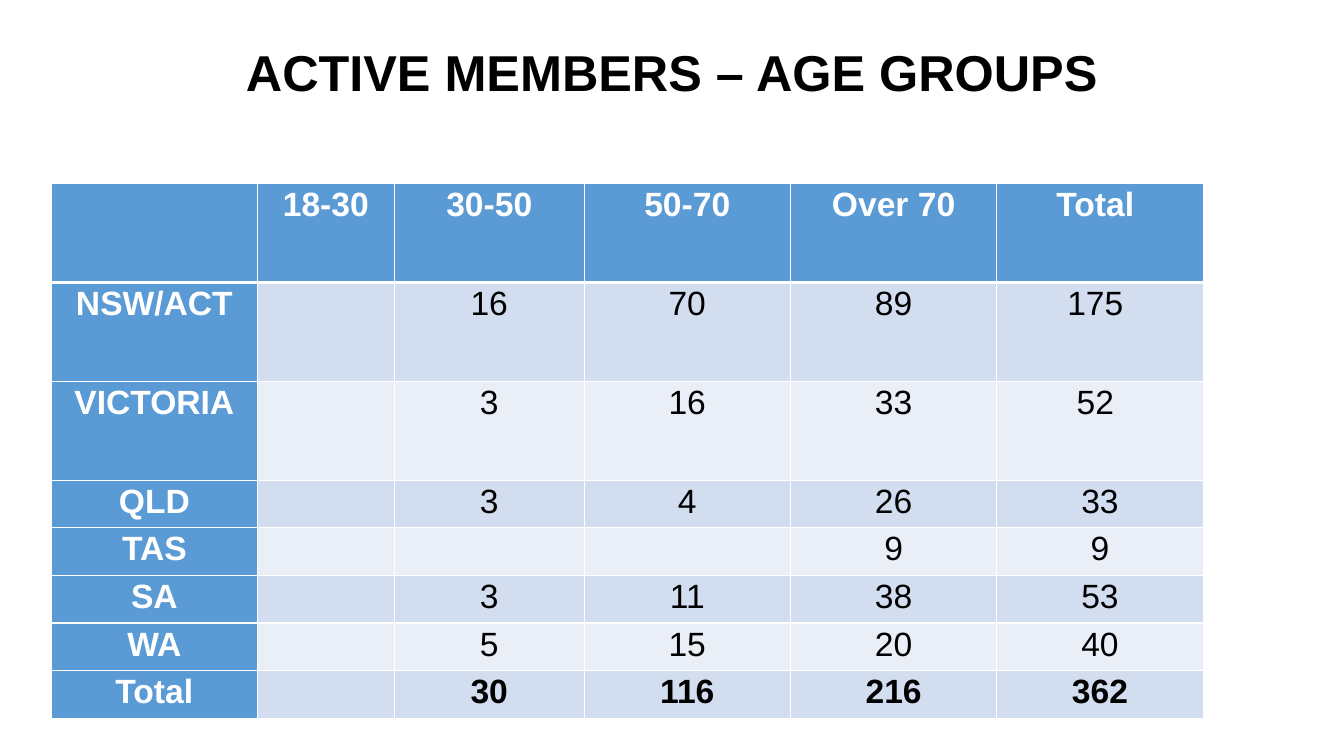
from lxml.etree import SubElement
from pptx import Presentation
from pptx.dml.color import RGBColor
from pptx.enum.text import MSO_ANCHOR, PP_ALIGN
from pptx.oxml.ns import qn
from pptx.util import Cm, Pt

TITLE = "ACTIVE MEMBERS – AGE GROUPS"
ROWS = [
    ("", "18-30", "30-50", "50-70", "Over 70", "Total "),
    ("NSW/ACT", "", "16", "70", "89", "175 "),
    ("VICTORIA", "", "3", "16", "33", "52 "),
    ("QLD", "", "3", "4", "26", "33"),
    ("TAS", "", "", "", "9", "9"),
    ("SA", "", "3", "11", "38", "53"),
    ("WA", "", "5", "15", "20", "40"),
    ("Total", "", "30", "116", "216", "362"),
]
WIDTHS = [5.18, 3.46, 4.78] + [5.2] * 3
HEIGHTS = [2.49] * 3 + [1.2] * 5

FONT = "Arial"
BLACK = RGBColor(0, 0, 0)
WHITE = RGBColor(0xFF, 0xFF, 0xFF)
BLUE = RGBColor(0x5B, 0x9B, 0xD5)
BANDS = [RGBColor(0xEA, 0xEF, 0xF7), RGBColor(0xD2, 0xDE, 0xEF)]


def style(para, size, color, bold, spacing):
    para.alignment = PP_ALIGN.CENTER
    para.line_spacing = spacing
    for run in para.runs:
        font = run.font
        font.name, font.size, font.bold = FONT, Pt(size), bold
        font.color.rgb = color


def border(cell, side, width):
    """Draw one white edge; call before filling the cell."""
    props = cell._tc.get_or_add_tcPr()
    line = SubElement(props, qn(f"a:ln{side}"), w=str(Pt(width)))
    fill = SubElement(line, qn("a:solidFill"))
    SubElement(fill, qn("a:srgbClr"), val=str(WHITE))


def add_title(slide):
    box = slide.shapes.add_textbox(Cm(2.33), Cm(1.02), Cm(29.21), Cm(3))
    frame = box.text_frame
    frame.word_wrap = True
    frame.vertical_anchor = MSO_ANCHOR.TOP
    frame.margin_top = Cm(0.18)
    frame.text = TITLE
    style(frame.paragraphs[0], 36, BLACK, True, 0.9)


def fill_cell(cell, text, row, col):
    head = row == 0 or col == 0
    for side in "LRTB":
        thick = (row, side) in ((0, "B"), (1, "T"))
        border(cell, side, 3 if thick else 1)
    cell.fill.solid()
    cell.fill.fore_color.rgb = BLUE if head else BANDS[row % 2]
    cell.margin_left = cell.margin_right = Cm(0.19)
    cell.margin_top = cell.margin_bottom = 0
    cell.text = text
    bold = head or row == len(ROWS) - 1
    style(cell.text_frame.paragraphs[0], 24, WHITE if head else BLACK, bold, 1.07)


def add_grid(slide):
    frame = slide.shapes.add_table(
        len(ROWS), len(WIDTHS), Cm(1.3), Cm(4.63), Cm(sum(WIDTHS)), Cm(sum(HEIGHTS)))
    table = frame.table
    for col, width in zip(table.columns, WIDTHS):
        col.width = Cm(width)
    for row, height in zip(table.rows, HEIGHTS):
        row.height = Cm(height)
    for r, texts in enumerate(ROWS):
        for c, text in enumerate(texts):
            fill_cell(table.cell(r, c), text, r, c)


def main():
    deck = Presentation()
    deck.slide_width, deck.slide_height = Cm(33.87), Cm(19.05)
    slide = deck.slides.add_slide(deck.slide_layouts[6])
    add_title(slide)
    add_grid(slide)
    deck.save("out.pptx")


if __name__ == "__main__":
    main()
